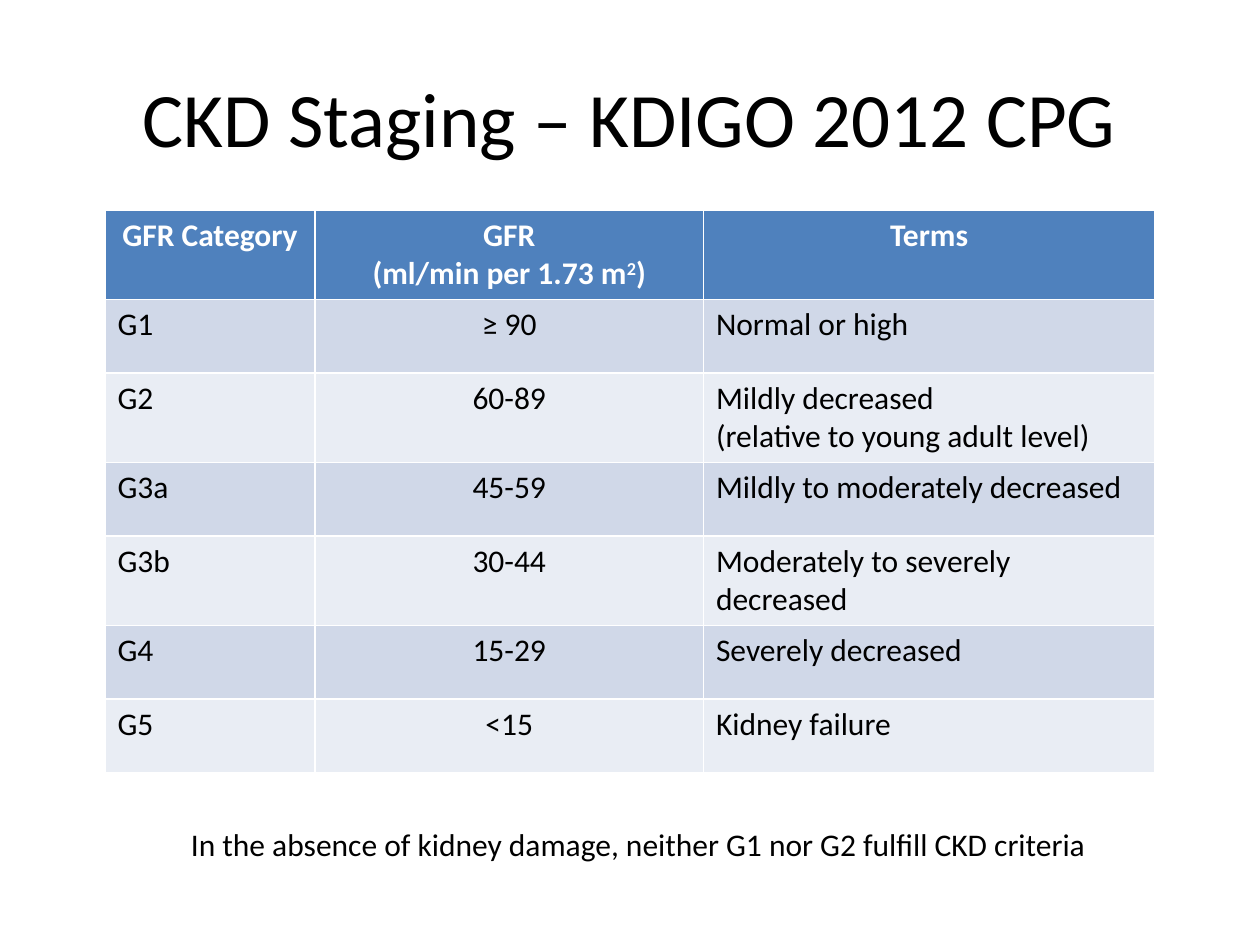
"""Build the slide on CKD staging by GFR category."""
from typing import NamedTuple

import pptx
import pptx.dml.color
import pptx.enum.text
import pptx.util

Pt = pptx.util.Pt
RGB = pptx.dml.color.RGBColor
Align = pptx.enum.text.PP_ALIGN
Anchor = pptx.enum.text.MSO_ANCHOR

BLACK = RGB(0x00, 0x00, 0x00)
WHITE = RGB(0xFF, 0xFF, 0xFF)
BLUE = RGB(0x4F, 0x81, 0xBD)
BANDS = (RGB(0xD0, 0xD8, 0xE8), RGB(0xE9, 0xED, 0xF4))
WIDTHS = (120, 222, 258)
ALIGNS = (Align.LEFT, Align.CENTER, Align.LEFT)
TALL, SHORT = 46, 42


class Stage(NamedTuple):
    name: str
    rate: str
    term: str
    high: float = SHORT


HEAD = Stage("GFR Category", "GFR\n(ml/min per 1.73 m^2^)", "Terms", TALL)
STAGES = (
    Stage("G1", "≥ 90", "Normal or high"),
    Stage("G2", "60-89", "Mildly decreased\v(relative to young adult level)", TALL),
    Stage("G3a", "45-59", "Mildly to moderately decreased"),
    Stage("G3b", "30-44", "Moderately to severely decreased", TALL),
    Stage("G4", "15-29", "Severely decreased"),
    Stage("G5", "<15", "Kidney failure"),
)


def write(frame: pptx.text.text.TextFrame, text: str, *, size: float = 18,
          color: RGB = BLACK, bold: bool = False, align: Align = Align.LEFT) -> None:
    """Fill a frame; text between carets is raised."""
    for row, line in enumerate(text.split("\n")):
        para = frame.add_paragraph() if row else frame.paragraphs[0]
        para.alignment = align
        first, *rest = line.split("^")
        para.text = first
        for spot, part in enumerate(rest):
            run = para.add_run()
            run.text = part
            if spot % 2 == 0:
                run.font._element.set("baseline", "30000")
        for run in para.runs:
            font = run.font
            font.name, font.size, font.bold = "Calibri", Pt(size), bold
            font.color.rgb = color


def add_stages(slide: pptx.slide.Slide) -> None:
    """Draw the table of stages under its header row."""
    rows = (HEAD, *STAGES)
    table = slide.shapes.add_table(
        len(rows), len(WIDTHS), Pt(60), Pt(120), Pt(sum(WIDTHS)),
        Pt(sum(stage.high for stage in rows))).table
    for col, width in zip(table.columns, WIDTHS):
        col.width = Pt(width)
    for r, stage in enumerate(rows):
        table.rows[r].height = Pt(stage.high)
        head = r == 0
        for c, text in enumerate((stage.name, stage.rate, stage.term)):
            cell = table.cell(r, c)
            cell.fill.solid()
            cell.fill.fore_color.rgb = BLUE if head else BANDS[(r - 1) % 2]
            write(cell.text_frame, text, bold=head,
                  color=WHITE if head else BLACK,
                  align=Align.CENTER if head else ALIGNS[c])


def main() -> None:
    """Build and save the slide."""
    deck = pptx.Presentation()
    deck.slide_width, deck.slide_height = Pt(720), Pt(540)
    slide = deck.slides.add_slide(deck.slide_layouts[5])
    title = slide.shapes.title
    title.left, title.top, title.width, title.height = Pt(36), Pt(21.6), Pt(648), Pt(90)
    title.text_frame.vertical_anchor = Anchor.MIDDLE
    write(title.text_frame, "CKD Staging – KDIGO 2012 CPG", size=44, align=Align.CENTER)
    add_stages(slide)
    note = slide.shapes.add_textbox(Pt(102), Pt(468), Pt(533), Pt(29)).text_frame
    note.word_wrap = False
    note.auto_size = pptx.enum.text.MSO_AUTO_SIZE.SHAPE_TO_FIT_TEXT
    write(note, "In the absence of kidney damage, neither G1 nor G2 fulfill CKD criteria")
    deck.save("out.pptx")


if __name__ == "__main__":
    main()
